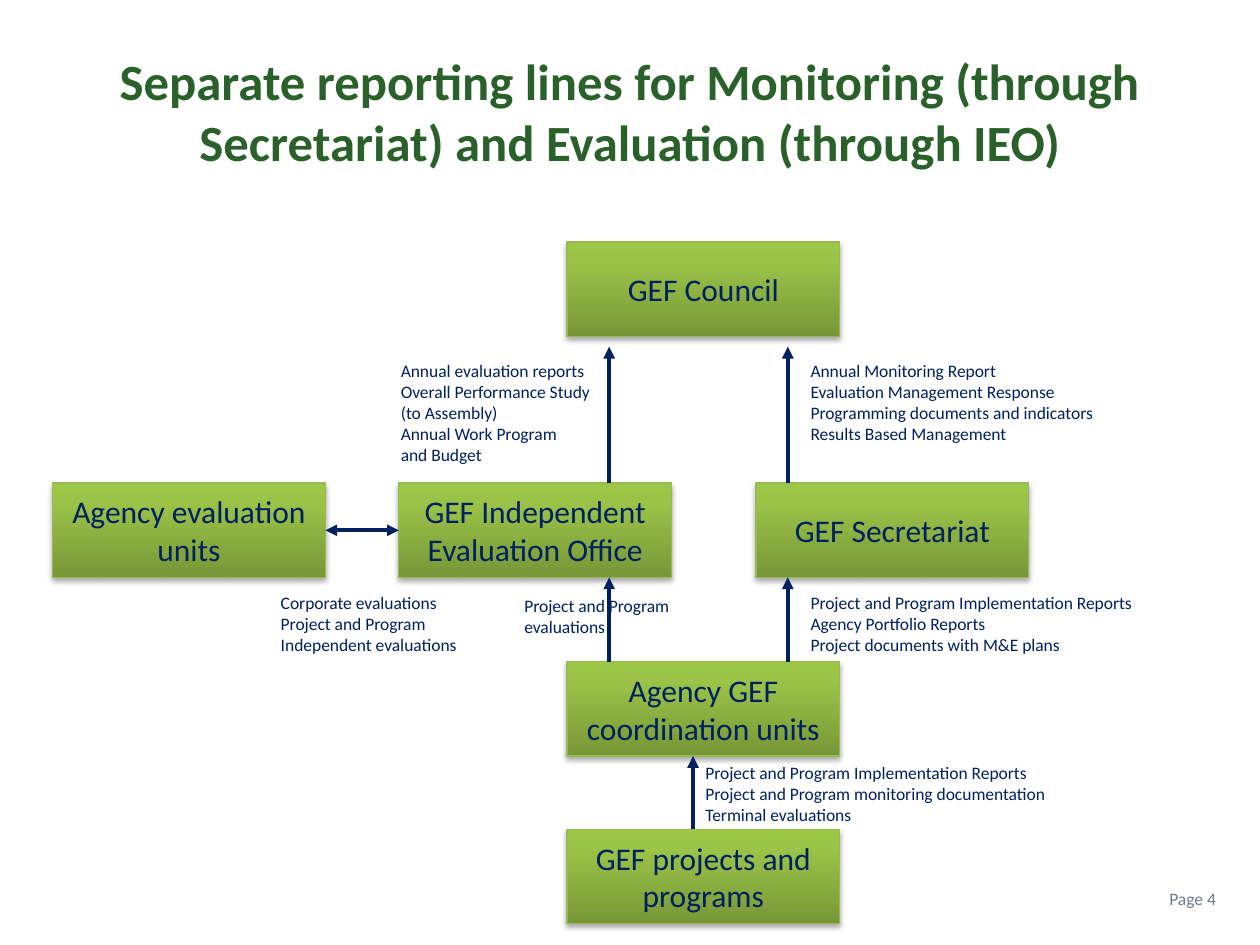
from copy import deepcopy
from dataclasses import dataclass

from lxml import etree
from pptx import Presentation
from pptx.dml.color import RGBColor
from pptx.enum import shapes, text
from pptx.oxml.ns import qn
from pptx.util import Cm, Pt

FONT = "Calibri"
NAVY = RGBColor(0x00, 0x20, 0x60)
TITLE_GREEN = RGBColor(0x2A, 0x60, 0x2A)
PAGE_GREY = RGBColor(0x6F, 0x7A, 0x8F)
BOX_EDGE = RGBColor(0x98, 0xB9, 0x55)
BOX_STOPS = [(0, RGBColor(0x77, 0x97, 0x37)),
             (0.8, RGBColor(0x9B, 0xC3, 0x48)),
             (1, RGBColor(0x9D, 0xC7, 0x46))]

# Shared grid, in cm
BOX_W, BOX_H = 5.5, 1.9
COUNCIL_Y, OFFICE_Y, AGENCY_Y, PROJECT_Y = 4.88, 9.74, 13.34, 16.72
CENTRE_X = 11.43
EVALUATION_X, MONITORING_X, PROJECT_X = 12.28, 15.88, 13.97
NOTE_X = 16.09


@dataclass
class Unit:
    name: str
    left: float
    top: float


@dataclass
class Report:
    """An upward reporting line."""
    x: float
    start: float
    end: float


@dataclass
class Note:
    left: float
    top: float
    width: float
    height: float
    lines: list[str]


UNITS = [
    Unit("GEF Council", CENTRE_X, COUNCIL_Y),
    Unit("Agency evaluation units", 1.06, OFFICE_Y),
    Unit("GEF Independent Evaluation Office", 8.04, OFFICE_Y),
    Unit("GEF Secretariat", 15.24, OFFICE_Y),
    Unit("Agency GEF coordination units", CENTRE_X, AGENCY_Y),
    Unit("GEF projects and programs", CENTRE_X, PROJECT_Y),
]

REPORTS = [Report(x, start, end)
           for x in (EVALUATION_X, MONITORING_X)
           for start, end in ((OFFICE_Y, 6.99), (AGENCY_Y, OFFICE_Y + BOX_H))]
REPORTS.append(Report(PROJECT_X, PROJECT_Y, AGENCY_Y + BOX_H))

NOTES = [
    Note(7.83, 7.13, 4.46, 2.4,
         ["Annual evaluation reports", "Overall Performance Study",
          "(to Assembly)", "Annual Work Program", "and Budget"]),
    Note(NOTE_X, 7.13, 6.3, 1.96,
         ["Annual Monitoring Report", "Evaluation Management Response",
          "Programming documents and indicators", "Results Based Management"]),
    Note(NOTE_X, 11.8, 7.11, 1.54,
         ["Project and Program Implementation Reports",
          "Agency Portfolio Reports", "Project documents with M&E plans"]),
    Note(10.32, 11.87, 3.65, 1.12, ["Project and Program", "evaluations"]),
    Note(5.41, 11.8, 4.12, 1.54,
         ["Corporate evaluations", "Project and Program",
          "Independent evaluations"]),
    Note(PROJECT_X, 15.24, 7.49, 1.54,
         ["Project and Program Implementation Reports",
          "Project and Program monitoring documentation",
          "Terminal evaluations"]),
]


def style(frame, size: float, colour: RGBColor, align, bold: bool = False) -> None:
    for paragraph in frame.paragraphs:
        paragraph.alignment = align
        for run in paragraph.runs:
            run.font.name = FONT
            run.font.size = Pt(size)
            run.font.bold = bold
            run.font.color.rgb = colour


def add_unit(slide, unit: Unit):
    box = slide.shapes.add_shape(shapes.MSO_SHAPE.RECTANGLE, Cm(unit.left),
                                 Cm(unit.top), Cm(BOX_W), Cm(BOX_H))
    box.line.color.rgb = BOX_EDGE
    box.line.width = Pt(0.75)

    # Three-stop gradient, dark at the bottom
    box.fill.gradient()
    box.fill.gradient_angle = 90
    properties = box._element.spPr
    stop_list = properties.find(".//" + qn("a:gsLst"))
    stop_list.insert(1, deepcopy(stop_list[0]))
    for stop, (position, colour) in zip(box.fill.gradient_stops, BOX_STOPS):
        stop.position = position
        stop.color.rgb = colour

    # Soft shadow below the box
    box.shadow.inherit = False
    shadow = etree.SubElement(properties.find(qn("a:effectLst")), qn("a:outerShdw"),
                              blurRad="40000", dist="23000", dir="5400000",
                              rotWithShape="0")
    black = etree.SubElement(shadow, qn("a:srgbClr"), val="000000")
    etree.SubElement(black, qn("a:alpha"), val="35000")

    box.text_frame.text = unit.name
    box.text_frame.word_wrap = True
    box.text_frame.vertical_anchor = text.MSO_ANCHOR.MIDDLE
    style(box.text_frame, 18, NAVY, text.PP_ALIGN.CENTER)
    return box


def add_arrow(slide, x1: float, y1: float, x2: float, y2: float,
              both_ends: bool = False):
    arrow = slide.shapes.add_connector(shapes.MSO_CONNECTOR.STRAIGHT,
                                       Cm(x1), Cm(y1), Cm(x2), Cm(y2))
    arrow.line.color.rgb = NAVY
    arrow.line.width = Pt(2.25)
    line = arrow.line._get_or_add_ln()
    if both_ends:
        etree.SubElement(line, qn("a:headEnd"), type="triangle")
    etree.SubElement(line, qn("a:tailEnd"), type="triangle")
    etree.SubElement(arrow._element.spPr, qn("a:effectLst"))
    return arrow


def add_note(slide, note: Note) -> None:
    frame = slide.shapes.add_textbox(Cm(note.left), Cm(note.top), Cm(note.width),
                                     Cm(note.height)).text_frame
    frame.text = "\n".join(note.lines)
    frame.word_wrap = False
    frame.auto_size = text.MSO_AUTO_SIZE.SHAPE_TO_FIT_TEXT
    style(frame, 10, NAVY, text.PP_ALIGN.LEFT)


def main() -> None:
    deck = Presentation()
    deck.slide_width, deck.slide_height = Cm(25.4), Cm(19.05)
    slide = deck.slides.add_slide(deck.slide_layouts[5])

    # Title
    title = slide.shapes.title
    title.left, title.top = Cm(0.64), Cm(0.64)
    title.width, title.height = Cm(24.13), Cm(3.18)
    title.text_frame.text = ("Separate reporting lines for Monitoring (through "
                             "Secretariat) and Evaluation (through IEO)")
    title.text_frame.vertical_anchor = text.MSO_ANCHOR.MIDDLE
    style(title.text_frame, 29, TITLE_GREEN, text.PP_ALIGN.CENTER, bold=True)

    # Units and reporting lines
    boxes = {unit.name: add_unit(slide, unit) for unit in UNITS}
    for report in REPORTS:
        add_arrow(slide, report.x, report.start, report.x, report.end)

    # Two-way exchange between the evaluation offices
    middle = OFFICE_Y + BOX_H / 2
    exchange = add_arrow(slide, 6.56, middle, 8.04, middle, both_ends=True)
    exchange.begin_connect(boxes["Agency evaluation units"], 3)
    exchange.end_connect(boxes["GEF Independent Evaluation Office"], 1)

    # What each line carries
    for note in NOTES:
        add_note(slide, note)

    # Page number
    page = slide.shapes.add_textbox(Cm(22.02), Cm(17.78), Cm(2.74), Cm(0.84)).text_frame
    page.text = "Page 4"
    page.word_wrap = True
    style(page, 10, PAGE_GREY, text.PP_ALIGN.RIGHT)

    deck.save("out.pptx")


if __name__ == "__main__":
    main()
